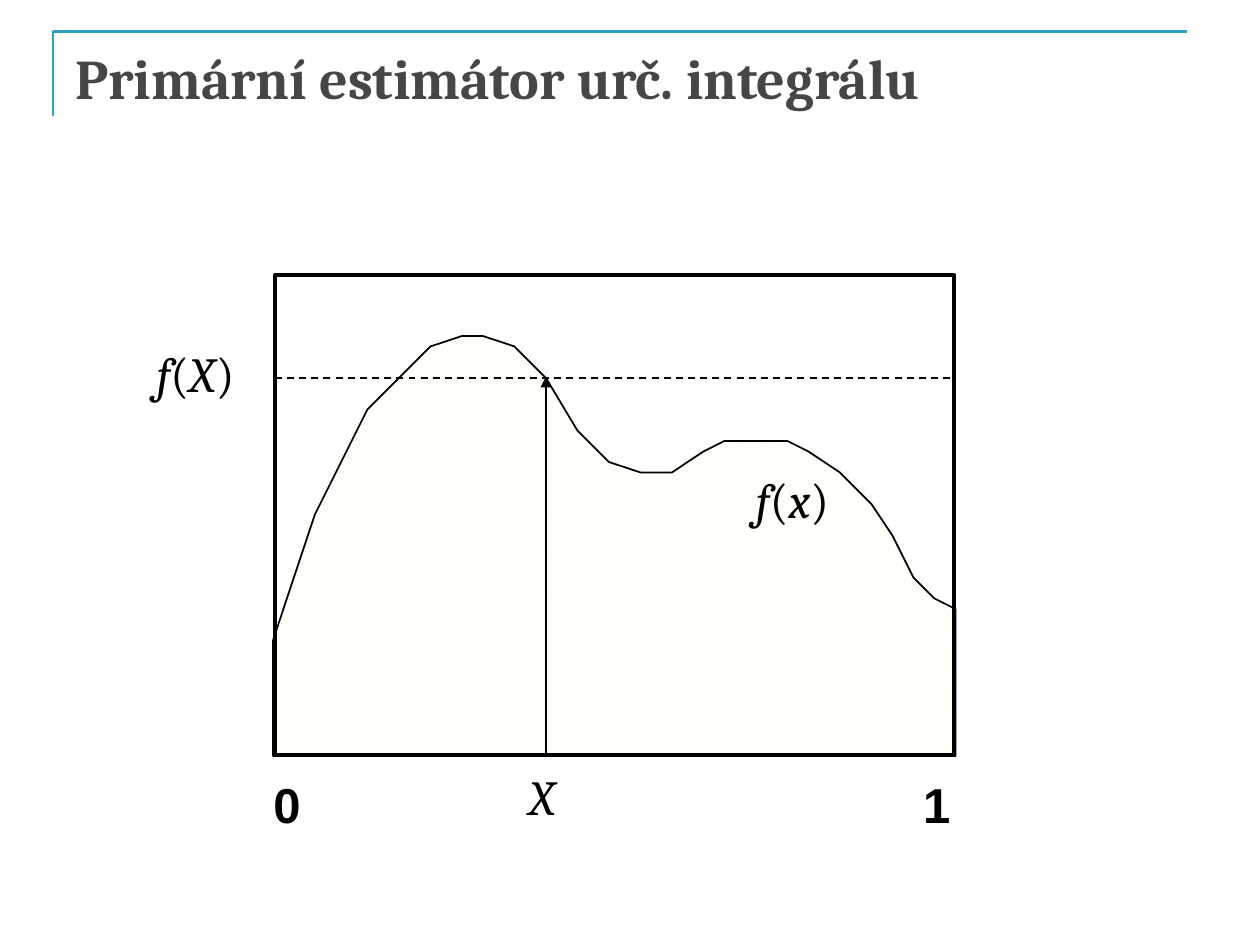
import pptx
import pptx.util
import pptx.dml.color
import pptx.enum.dml
import pptx.enum.shapes
import pptx.enum.text
from lxml import etree

Cm = pptx.util.Cm
Pt = pptx.util.Pt
BLACK = pptx.dml.color.RGBColor(0x00, 0x00, 0x00)
WHITE = pptx.dml.color.RGBColor(0xFF, 0xFF, 0xFF)
TEAL = pptx.dml.color.RGBColor(0x2D, 0xA2, 0xBF)
GREY = pptx.dml.color.RGBColor(0x46, 0x46, 0x46)
CREAM = pptx.dml.color.RGBColor(0xFC, 0xFE, 0xB9)
DRAWING = "{http://schemas.openxmlformats.org/drawingml/2006/main}"

deck = pptx.Presentation()
deck.slide_width = Cm(25.4)
deck.slide_height = Cm(19.05)
page = deck.slides.add_slide(deck.slide_layouts[6])


def add_text(left, top, width, height, pieces, font, size, color, bold=False):
    box = page.shapes.add_textbox(Cm(left), Cm(top), Cm(width), Cm(height))
    para = box.text_frame.paragraphs[0]
    for text, italic in pieces:
        span = para.add_run()
        span.text = text
        span.font.name = font
        span.font.size = Pt(size)
        span.font.color.rgb = color
        span.font.bold = bold
        span.font.italic = italic
    return box


def add_outline(points, scale, closed, color, width):
    builder = page.shapes.build_freeform(*points[0], scale=scale)
    builder.add_line_segments(points[1:], close=closed)
    outline = builder.convert_to_shape()
    outline.shadow.inherit = False
    outline.line.color.rgb = color
    outline.line.width = Pt(width)
    return outline


corner = add_outline([(107, 234), (107, 64), (2393, 64)], Cm(0.01), False, TEAL, 1.5)
corner.fill.background()

title = add_text(1.27, 0.76, 22.86, 3.18, [("Primární estimátor urč. integrálu", False)],
                 "Cambria", 32, GREY, True)
title.text_frame.word_wrap = True

curve_points = [
    (26, 61), (30, 49), (35, 39), (41, 33), (44, 32), (46, 32), (49, 33), (52, 36),
    (55, 41), (58, 44), (61, 45), (64, 45), (67, 43), (69, 42), (72, 42), (75, 42),
    (77, 43), (80, 45), (83, 48), (85, 51), (87, 55), (89, 57), (91, 58), (91, 72), (26, 72),
]
area = add_outline(curve_points, Cm(2.54) / 12, True, BLACK, 1)
area.fill.patterned()
area.fill.pattern = pptx.enum.dml.MSO_PATTERN.LARGE_CONFETTI
area.fill.fore_color.rgb = CREAM
area.fill.back_color.rgb = WHITE

frame = page.shapes.add_shape(pptx.enum.shapes.MSO_SHAPE.RECTANGLE,
                              Cm(5.54), Cm(5.54), Cm(13.69), Cm(9.68))
frame.shadow.inherit = False
frame.fill.background()
frame.line.color.rgb = BLACK
frame.line.width = Pt(2)

lines = []
for ends in [(11, 15.27, 11, 7.6), (5.54, 7.62, 19.25, 7.62)]:
    line = page.shapes.add_connector(pptx.enum.shapes.MSO_CONNECTOR.STRAIGHT,
                                     *[Cm(value) for value in ends])
    line.line.color.rgb = BLACK
    line.line.width = Pt(1)
    lines.append(line)
sample_arrow, value_level = lines
value_level.line.dash_style = pptx.enum.dml.MSO_LINE.DASH
etree.SubElement(sample_arrow.line._get_or_add_ln(), DRAWING + "tailEnd", type="triangle")
for line in lines:
    etree.SubElement(line._element.spPr, DRAWING + "effectLst")

labels = [
    (10.41, 15.32, 1.22, [("X", True)], "Cambria", False),
    (14.99, 9.35, 2.08, [("f", True), ("(", False), ("x", True), (")", False)], "Cambria", False),
    (2.69, 6.81, 2.54, [(" ", False), ("f", True), ("(", False), ("X", True), (")", False)],
     "Cambria", False),
    (5.26, 15.49, 1.07, [("0", False)], "Arial", True),
    (18.36, 15.49, 1.07, [("1", False)], "Arial", True),
]
for left, top, width, pieces, font, bold in labels:
    label = add_text(left, top, width, 1.45, pieces, font, 28, BLACK, bold)
    label.text_frame.word_wrap = False
    label.text_frame.auto_size = pptx.enum.text.MSO_AUTO_SIZE.SHAPE_TO_FIT_TEXT

deck.save("out.pptx")
